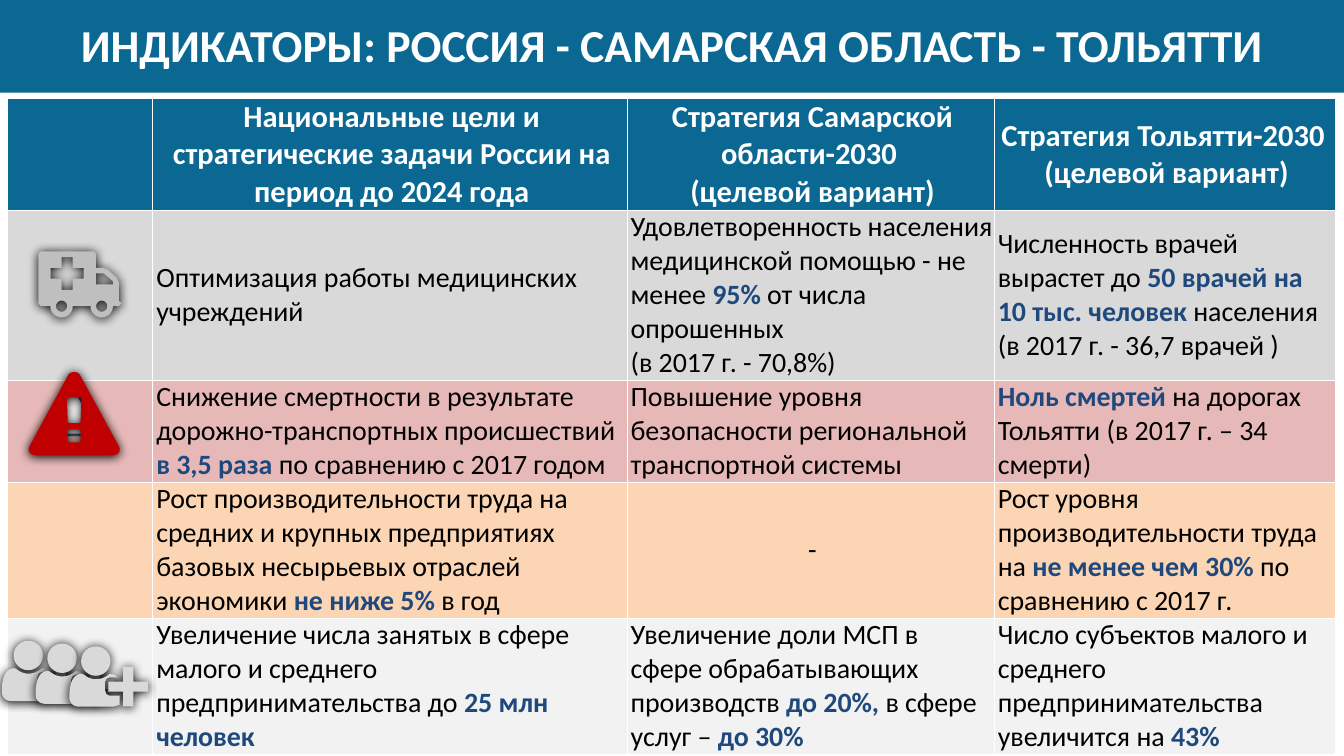
import math
from dataclasses import dataclass

from lxml import etree
from pptx import Presentation
from pptx import util as u
from pptx.dml import color
from pptx.enum import shapes, text
from pptx.oxml import ns


@dataclass(frozen=True)
class Theme:
    font: str = "Calibri"
    title_size: int = 36
    header_size: int = 24
    body_size: int = 22
    blue: str = "0B6893"
    accent: str = "1F497D"
    outline: str = "3A5F8C"
    black: str = "000000"
    white: str = "FFFFFF"
    alarm: str = "C00000"
    silver: str = "BFBFBF"
    light: str = "D9D9D9"
    rows: tuple = ("0B6893", "D9D9D9", "E6B9B8", "FCD5B5", "F2F2F2")


SLIDE_SIZE = (1058.4, 595.44)
COLUMN_WIDTHS = (114.3, 373.5, 289.2, 268.4)
ROW_HEIGHTS = (72, 110.2, 66.2, 87.8, 95.8)

# Asterisks enclose the highlighted figures; a line break starts a paragraph.
INDICATORS = (
    ("", "Национальные цели и стратегические задачи России на период до 2024 года",
     "Стратегия Самарской области-2030 \n(целевой вариант)",
     "Стратегия Тольятти-2030 \n(целевой вариант)"),
    ("", "Оптимизация работы медицинских учреждений",
     "Удовлетворенность населения медицинской помощью - не менее *95%* от числа опрошенных\n"
     "(в 2017 г. - 70,8%)",
     "Численность врачей вырастет до *50 врачей на 10 тыс. человек *населения\n"
     "(в 2017 г. - 36,7 врачей )"),
    ("", "Снижение смертности в результате дорожно-транспортных происшествий "
     "*в 3,5 раза *по сравнению с 2017 годом",
     "Повышение уровня безопасности региональной транспортной системы",
     "*Ноль смертей *на дорогах Тольятти (в 2017 г. – 34 смерти)"),
    ("", "Рост производительности труда на средних и крупных предприятиях "
     "базовых несырьевых отраслей экономики *не ниже 5% *в год",
     "-",
     "Рост уровня производительности труда на *не менее чем 30% *по сравнению с 2017 г."),
    ("", "Увеличение числа занятых в сфере малого и среднего предпринимательства "
     "до *25 млн человек*",
     "Увеличение доли МСП в сфере обрабатывающих производств *до 20%, *в сфере услуг – *до 30%*",
     "Число субъектов малого и среднего предпринимательства увеличится на *43%*"),
)


def arc(x, y, radius, sweep=360):
    """Points of an arc that starts at the right and runs through the bottom."""
    angles = [math.radians(sweep * step / 24) for step in range(25)]
    return [(x + radius * math.cos(a), y + radius * math.sin(a)) for a in angles]


def curve(*controls):
    """Points along a cubic Bezier curve with four control points."""
    points = []
    for step in range(13):
        t = step / 12
        weights = ((1 - t) ** 3, 3 * t * (1 - t) ** 2, 3 * t * t * (1 - t), t ** 3)
        points.append(tuple(sum(w * c[axis] for w, c in zip(weights, controls))
                            for axis in (0, 1)))
    return points


def plus(x, y, reach, half):
    quarter = [(half, -reach), (half, -half), (reach, -half)]
    points = []
    for _ in range(4):
        points += [(x + dx, y + dy) for dx, dy in quarter]
        quarter = [(-dy, dx) for dx, dy in quarter]
    return points


AMBULANCE = (
    [(0, 2), (2, 0), (43.4, 0), (45.4, 2), (45.4, 13), (51.1, 13), (54.7, 14.4),
     (61.9, 21), (63.4, 24.5), (63.4, 38.9), (65.5, 41), (63.4, 43.2)]
    + arc(49.9, 43.2, 8.8, 180) + arc(18.3, 43.2, 8.8, 180) + [(2, 43.2), (0, 41)],
    [(45.4, 26), (45.4, 17.3), (51.5, 17.3), (59, 23.8), (59, 26)],
    arc(49.9, 43.2, 4.4), arc(18.3, 43.2, 4.4), plus(22.7, 17.3, 13, 4.3),
)
WARNING = (
    curve((30.8, 2), (32.5, -0.6), (38, -0.6), (39.6, 2))
    + curve((70.3, 58.3), (72.5, 62), (70, 65.5), (65.5, 65.5))
    + curve((5, 65.5), (0.5, 65.5), (-2, 62), (0.2, 58.3)),
    [(29.5, 20.9), (30.6, 20), (39.9, 20), (41, 20.9), (40.3, 39.6), (38.9, 40.3),
     (31.7, 40.3), (30.2, 39.6)],
    [(30.2, 46), (31, 45.4), (39.6, 45.4), (40.3, 46), (40.3, 54.8), (39.6, 55.4),
     (31, 55.4), (30.2, 54.8)],
)
PERSON = (
    [(31.7, 38.9), (39.6, 38.9), (39.6, 46.1), (34.6, 47.5)]
    + curve((7.9, 47.5), (2.9, 47.5), (0, 44.6), (0, 39.6))
    + curve((0, 39.6), (0, 32.4), (1.4, 21.6), (10.1, 21.6))
    + curve((11.5, 22.3), (14.4, 24.5), (17.3, 25.9), (20.9, 25.9))
    + curve((20.9, 25.9), (25, 25.9), (28, 24.5), (31, 22.3))
    + [(31.7, 21.6), (35.5, 22.3), (38.2, 24.5), (31.7, 24.5), (29.2, 25.6), (28.1, 28.1),
       (28.1, 34.6), (29.2, 37.8)],
    arc(20.9, 11.6, 11.6), plus(46.4, 31.7, 15.6, 4),
)


class SlideBuilder:
    def __init__(self, slide, theme):
        self.slide, self.theme = slide, theme

    def paint(self, shape, fill, line=None):
        shape.shadow.inherit = False
        shape.fill.solid()
        shape.fill.fore_color.rgb = color.RGBColor.from_string(fill)
        if line:
            shape.line.color.rgb = color.RGBColor.from_string(line)
            shape.line.width = u.Pt(2)
        else:
            shape.line.fill.background()

    def preset(self, kind, box, fill, line=None):
        shape = self.slide.shapes.add_shape(kind, *map(u.Pt, box))
        self.paint(shape, fill, line)

    def icon(self, contours, left, top, fill, group=None):
        """Draw closed contours as one shape; inner contours become holes."""
        outlines = [[(u.Pt(x), u.Pt(y)) for x, y in contour] for contour in contours]
        builder = (group or self.slide).shapes.build_freeform(*outlines[0][0])
        for number, outline in enumerate(outlines):
            if number:
                builder.move_to(*outline[0])
            builder.add_line_segments(outline[1:], close=True)
        shape = builder.convert_to_shape(u.Pt(left), u.Pt(top))
        self.paint(shape, fill)
        effects = shape._element.spPr.find(ns.qn("a:effectLst"))
        shadow = etree.SubElement(effects, ns.qn("a:outerShdw"), blurRad=str(u.Pt(8.5)),
                                  dist=str(u.Pt(1)), dir="5400000", rotWithShape="0")
        etree.SubElement(shadow, ns.qn("a:srgbClr"), val=self.theme.black)

    def add_runs(self, paragraph, content, size, ink, bold=False, centred=False):
        paragraph.alignment = text.PP_ALIGN.CENTER if centred else text.PP_ALIGN.LEFT
        for number, part in enumerate(content.split("*")):
            if not part:
                continue
            run = paragraph.add_run()
            run.text = part
            marked = number % 2 == 1
            run.font.name, run.font.size = self.theme.font, u.Pt(size)
            run.font.bold = bold or marked
            run.font.color.rgb = color.RGBColor.from_string(self.theme.accent if marked else ink)

    def title(self, content, box):
        frame = self.slide.shapes.add_textbox(*map(u.Pt, box)).text_frame
        frame.word_wrap = True
        frame.auto_size = text.MSO_AUTO_SIZE.SHAPE_TO_FIT_TEXT
        self.add_runs(frame.paragraphs[0], content, self.theme.title_size,
                      self.theme.white, True, True)

    def cell(self, cell, content, fill, header):
        cell.margin_left = cell.margin_right = cell.margin_top = cell.margin_bottom = 0
        cell.vertical_anchor = text.MSO_ANCHOR.MIDDLE
        properties = cell._tc.get_or_add_tcPr()
        for side in ("lnL", "lnR", "lnT", "lnB"):
            border = etree.SubElement(properties, ns.qn(f"a:{side}"), w=str(u.Pt(1)))
            solid = etree.SubElement(border, ns.qn("a:solidFill"))
            etree.SubElement(solid, ns.qn("a:srgbClr"), val=self.theme.white)
        cell.fill.solid()
        cell.fill.fore_color.rgb = color.RGBColor.from_string(fill)
        size = self.theme.header_size if header else self.theme.body_size
        ink = self.theme.white if header else self.theme.black
        for number, line in enumerate(content.split("\n")):
            frame = cell.text_frame
            paragraph = frame.add_paragraph() if number else frame.paragraphs[0]
            paragraph._p.get_or_add_pPr().set("marL", str(u.Pt(2.8)))
            self.add_runs(paragraph, line, size, ink, header, header or line == "-")

    def table(self, rows, left, top, height):
        frame = self.slide.shapes.add_table(
            len(rows), len(COLUMN_WIDTHS), u.Pt(left), u.Pt(top),
            u.Pt(sum(COLUMN_WIDTHS)), u.Pt(height))
        table = frame.table
        table.first_row = table.horz_banding = False
        for column, width in zip(table.columns, COLUMN_WIDTHS):
            column.width = u.Pt(width)
        for index, contents in enumerate(rows):
            table.rows[index].height = u.Pt(ROW_HEIGHTS[index])
            for column, content in enumerate(contents):
                self.cell(table.cell(index, column), content, self.theme.rows[index], index == 0)
        frame.height = u.Pt(height)


def main():
    presentation = Presentation()
    presentation.slide_width, presentation.slide_height = map(u.Pt, SLIDE_SIZE)
    slide = presentation.slides.add_slide(presentation.slide_layouts[6])
    theme = Theme()
    builder = SlideBuilder(slide, theme)
    builder.preset(shapes.MSO_SHAPE.RECTANGLE, (0, 0, SLIDE_SIZE[0], 73), theme.blue)
    builder.table(INDICATORS, 6, 77.8, 509)
    builder.icon(AMBULANCE, 30.2, 198, theme.silver)
    builder.preset(shapes.MSO_SHAPE.ISOSCELES_TRIANGLE, (34.6, 303, 44.6, 39.6),
                   theme.white, theme.outline)
    builder.icon(WARNING, 23.2, 293, theme.alarm)
    people = slide.shapes.add_group_shape()
    for number in range(3):
        builder.icon(PERSON, 1.4 + 26.6 * number, 504.7 + 2.2 * number, theme.light, people)
    builder.title("ИНДИКАТОРЫ: РОССИЯ - САМАРСКАЯ ОБЛАСТЬ - ТОЛЬЯТТИ", (0, 10, SLIDE_SIZE[0], 51))
    presentation.save("out.pptx")


if __name__ == "__main__":
    main()
